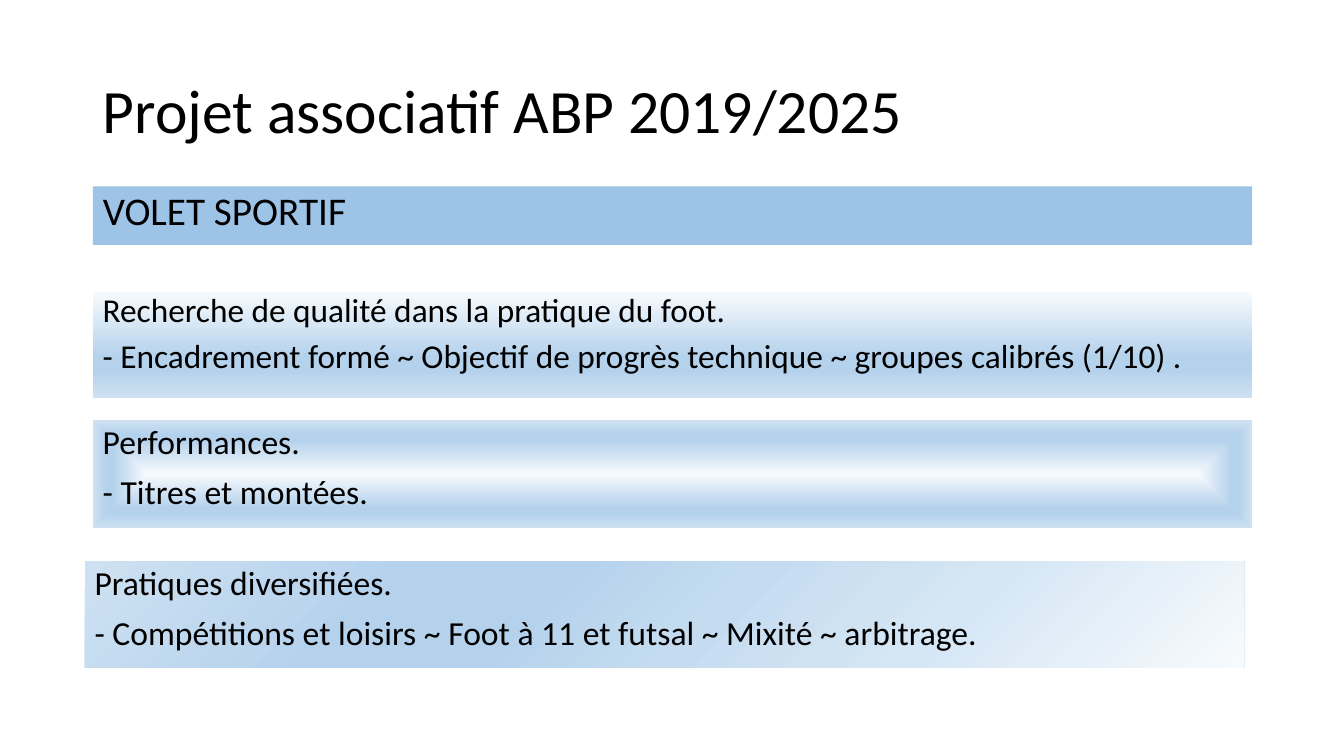
"""Builds the slide on the sporting side of the club project."""
import pptx
import pptx.util
import pptx.oxml
import pptx.oxml.ns
import pptx.dml.color
import pptx.enum.shapes
import pptx.enum.text

Inches = pptx.util.Inches
HUES = {"ink": "000000", "band": "9DC3E6", "pale": "F7FAFD", "mist": "D5E6F4",
        "sky": "C5DCF0", "blue": "B5D2EC", "edge": "CEE1F2"}
TAIL = [(61, "blue"), (74, "blue"), (100, "edge")]
LINEAR = '<a:lin ang="5400000" scaled="0"/>'
SHAPE = ('<a:path path="shape"><a:fillToRect l="50000" t="50000" '
         'r="50000" b="50000"/></a:path>')
CIRCLE = '<a:path path="circle"><a:fillToRect l="100000" t="100000"/></a:path>'
PANELS = [
    ((0.92, 2.9, 11.5, 1.05), 23.8, 0.8, LINEAR, [(0, "pale")],
     ["Recherche de qualité dans la pratique du foot.",
      "- Encadrement formé ~ Objectif de progrès technique ~ groupes calibrés (1/10) ."]),
    ((0.92, 4.17, 11.5, 1.07), 24, 0.9, SHAPE, [(0, "pale"), (46, "sky")],
     ["Performances.", "- Titres et montées."]),
    ((0.84, 5.57, 11.5, 1.05), 24, 0.9, CIRCLE,
     [(0, "pale"), (27, "mist"), (46, "sky")],
     ["Pratiques diversifiées.",
      "- Compétitions et loisirs ~ Foot à 11 et futsal ~ Mixité ~ arbitrage."]),
]


def hue(name):
    return pptx.dml.color.RGBColor.from_string(HUES[name])


def apply(item, form):
    for key, value in form.items():
        setattr(item, key, value)


class Deck:
    """Holds the style and the current slide."""

    def __init__(self):
        self.font = "Calibri"
        self.show = pptx.Presentation()
        apply(self.show, {"slide_width": Inches(13.33), "slide_height": Inches(7.5)})
        self.slide = self.show.slides.add_slide(self.show.slide_layouts[1])

    def place(self, shape, box):
        apply(shape, dict(zip(("left", "top", "width", "height"), map(Inches, box))))

    def label(self, shape, lines, size, space=0.9, before=10, anchor="TOP"):
        frame = shape.text_frame
        frame.text = "\n".join(lines)
        apply(frame, {"word_wrap": True,
                      "auto_size": pptx.enum.text.MSO_AUTO_SIZE.NONE,
                      "vertical_anchor": pptx.enum.text.MSO_ANCHOR[anchor]})
        for para in frame.paragraphs:
            apply(para, {"alignment": pptx.enum.text.PP_ALIGN.LEFT,
                         "line_spacing": space,
                         "space_before": pptx.util.Pt(before)})
            for run in para.runs:
                apply(run.font, {"name": self.font, "size": pptx.util.Pt(size)})
                run.font.color.rgb = hue("ink")

    def title(self, text, box):
        shape = self.slide.shapes.title
        self.place(shape, box)
        self.label(shape, [text], 44, before=0, anchor="MIDDLE")

    def band(self, text, box):
        shape = self.slide.placeholders[1]
        self.place(shape, box)
        self.label(shape, [text], 28)
        shape.fill.solid()
        shape.fill.fore_color.rgb = hue("band")
        props = shape.text_frame.paragraphs[0]._p.get_or_add_pPr()
        props.set("marL", "0")
        props.set("indent", "0")
        props.append(pptx.oxml.parse_xml(
            f'<a:buNone {pptx.oxml.ns.nsdecls("a")}/>'))

    def panel(self, box, size, space, flow, head, lines):
        shape = self.slide.shapes.add_shape(
            pptx.enum.shapes.MSO_SHAPE.RECTANGLE, *map(Inches, box))
        shape.shadow.inherit = False
        shape.line.fill.background()
        stops = "".join(
            f'<a:gs pos="{pos * 1000}"><a:srgbClr val="{HUES[name]}"/></a:gs>'
            for pos, name in head + TAIL)
        fill = pptx.oxml.parse_xml(
            f'<a:gradFill {pptx.oxml.ns.nsdecls("a")} rotWithShape="1">'
            f'<a:gsLst>{stops}</a:gsLst>{flow}</a:gradFill>')
        geom = shape._element.spPr.find(pptx.oxml.ns.qn("a:prstGeom"))
        geom.addnext(fill)
        self.label(shape, lines, size, space)


def main():
    deck = Deck()
    deck.title("Projet associatif ABP 2019/2025", (0.92, 0.4, 11.5, 1.45))
    deck.band("VOLET SPORTIF", (0.92, 1.85, 11.5, 0.58))
    for panel in PANELS:
        deck.panel(*panel)
    deck.show.save("out.pptx")


if __name__ == "__main__":
    main()
